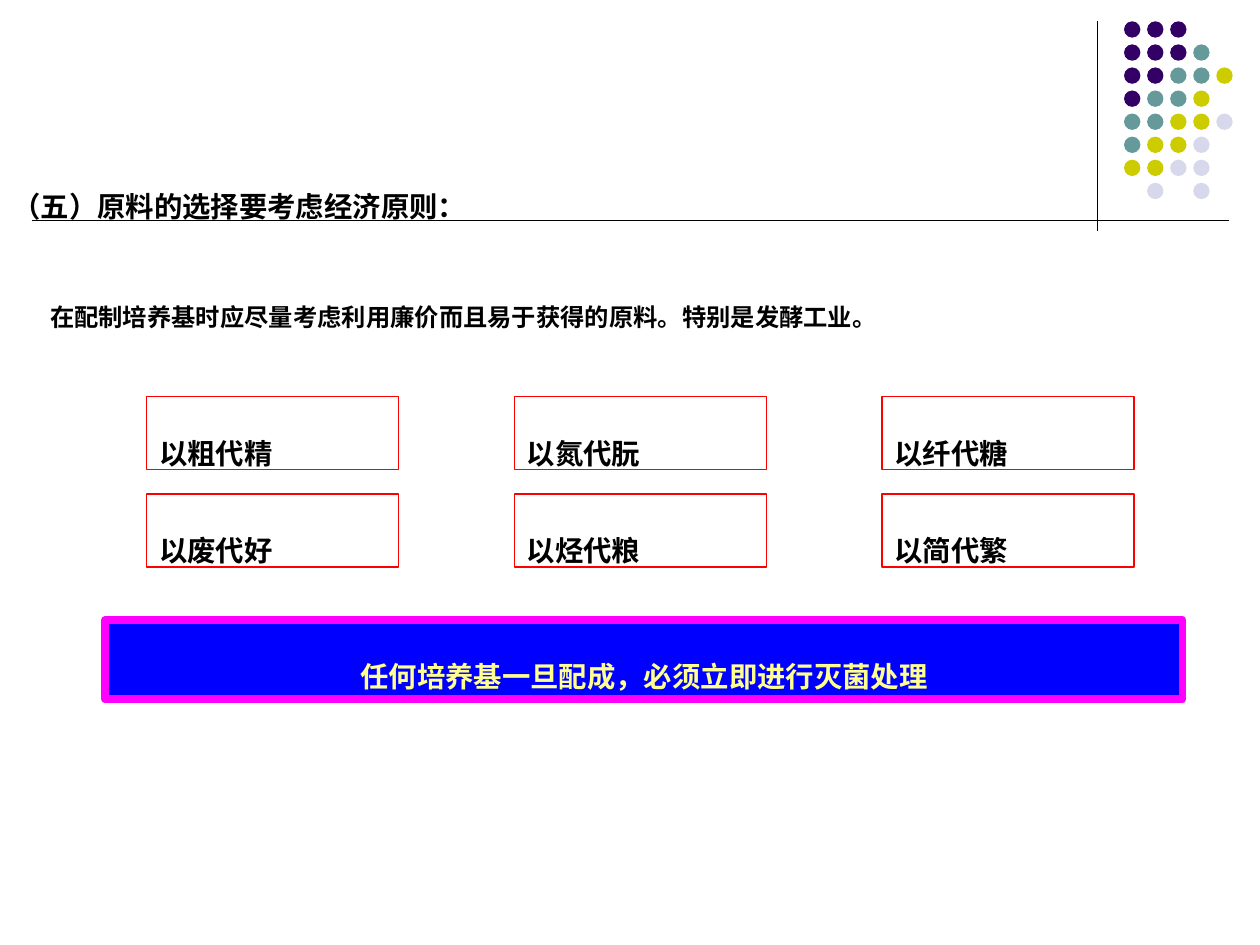
from pptx import Presentation
from pptx.dml.color import RGBColor
from pptx.enum.shapes import MSO_CONNECTOR as CONNECTOR, MSO_SHAPE as SHAPE
from pptx.enum.text import MSO_ANCHOR as ANCHOR, PP_ALIGN as ALIGN
from pptx.oxml.ns import qn
from pptx.util import Cm, Pt
from lxml.etree import SubElement

COLORS = {
    "black": "000000", "purple": "330066", "teal": "669999",
    "olive": "CCCC00", "lilac": "D8D8EC", "red": "FF0000",
    "blue": "0000FF", "magenta": "FF00FF", "cream": "FFFF8F",
}
CJK_FONT = "Noto Sans CJK SC"


def color(name):
    return RGBColor.from_string(COLORS[name])


def write(paragraph, text, size, font_name, color_name="black"):
    """Bold subscript text, with the same font for Chinese characters."""
    paragraph.text = text
    font = paragraph.runs[0].font
    font.size, font.bold, font.name = Pt(size), True, font_name
    font.color.rgb = color(color_name)
    properties = font._element
    properties.set("baseline", "-25000")
    SubElement(properties, qn("a:ea")).set("typeface", CJK_FONT)


presentation = Presentation()
presentation.slide_width, presentation.slide_height = Cm(25.4), Cm(19.05)
slide = presentation.slides.add_slide(presentation.slide_layouts[6])
shapes = slide.shapes

# Vertical and horizontal rules
for x1, y1, x2, y2 in [(22.12, 0.43, 22.12, 4.65), (0.64, 4.45, 24.77, 4.45)]:
    rule = shapes.add_connector(CONNECTOR.STRAIGHT, Cm(x1), Cm(y1), Cm(x2), Cm(y2))
    rule.line.color.rgb = color("black")
    rule.line.width = Pt(0.75)
    SubElement(rule._element.spPr, qn("a:effectLst"))

# Dot pattern: one letter per dot, a space where there is none
DOT_ROWS = ["PPP", "PPPT", "PPTTO", "PTTO", "TTOOL", "TOOL", "OOLL", " L L"]
DOT_COLORS = {"P": "purple", "T": "teal", "O": "olive", "L": "lilac"}
DOT_SIZE, DOT_STEP = 0.33, 0.465
for row, letters in enumerate(DOT_ROWS):
    for column, letter in enumerate(letters):
        if letter == " ":
            continue
        dot = shapes.add_shape(
            SHAPE.OVAL, Cm(22.66 + column * DOT_STEP), Cm(0.43 + row * DOT_STEP),
            Cm(DOT_SIZE), Cm(DOT_SIZE))
        dot.shadow.inherit = False
        dot.fill.solid()
        dot.fill.fore_color.rgb = color(DOT_COLORS[letter])
        dot.line.fill.background()

# Heading and explanation
text_frame = shapes.add_textbox(Cm(0), Cm(2.49), Cm(24.56), Cm(5.23)).text_frame
text_frame.word_wrap = True
heading = text_frame.paragraphs[0]
write(heading, "（五）原料的选择要考虑经济原则：", 28, CJK_FONT)
explanation = text_frame.add_paragraph()
write(explanation, "在配制培养基时应尽量考虑利用廉价而且易于获得的原料。特别是发酵工业。",
      24, CJK_FONT)
heading.line_spacing = explanation.line_spacing = 1.4
explanation.space_before = Pt(16)
explanation._p.get_or_add_pPr().set("indent", str(Cm(0.76)))

# Framed principles and the closing banner
PRINCIPLES = [["以粗代精", "以氮代朊", "以纤代糖"],
              ["以废代好", "以烃代粮", "以简代繁"]]
boxes = [(2.96 + column * 7.41, 8 + row * 1.96, 5.08, 1.47, text,
          "Times New Roman", "black", None, "red", 0.75, ALIGN.LEFT)
         for row, texts in enumerate(PRINCIPLES)
         for column, text in enumerate(texts)]
boxes.append((2.12, 12.5, 21.72, 1.6, "任何培养基一旦配成，必须立即进行灭菌处理",
              CJK_FONT, "cream", "blue", "magenta", 4.5, ALIGN.CENTER))
for (left, top, width, height, text, font_name, text_color,
     fill, border, border_width, alignment) in boxes:
    box = shapes.add_shape(SHAPE.RECTANGLE, Cm(left), Cm(top), Cm(width), Cm(height))
    box.shadow.inherit = False
    if fill:
        box.fill.solid()
        box.fill.fore_color.rgb = color(fill)
    else:
        box.fill.background()
    box.line.color.rgb = color(border)
    box.line.width = Pt(border_width)
    box.text_frame.word_wrap = True
    box.text_frame.vertical_anchor = ANCHOR.TOP
    paragraph = box.text_frame.paragraphs[0]
    write(paragraph, text, 28, font_name, text_color)
    paragraph.alignment = alignment

presentation.save("out.pptx")
